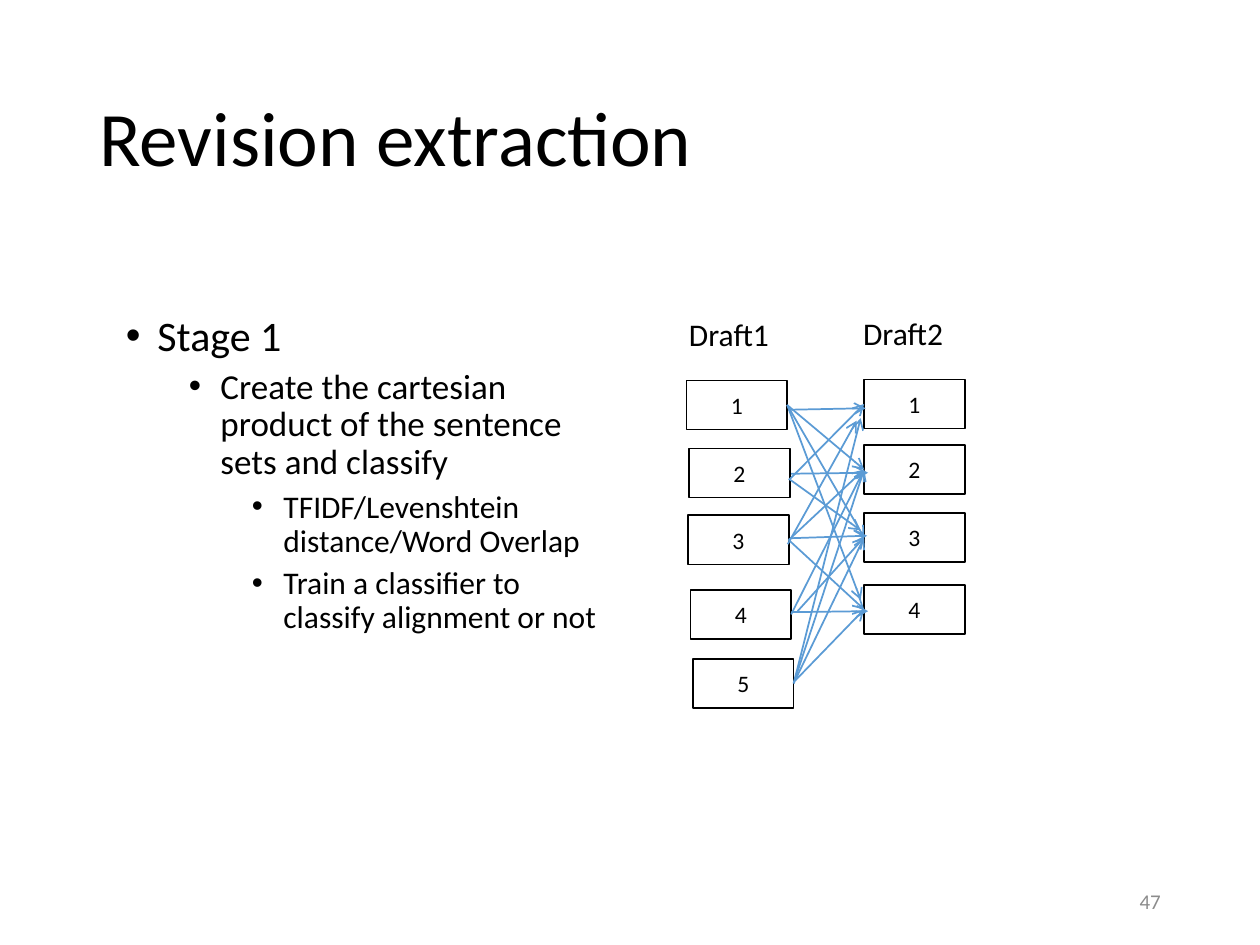
"""Build the slide on revision extraction: a bullet list and a diagram aligning two drafts."""
from lxml import etree
from pptx import Presentation
from pptx import util as u
from pptx.dml.color import RGBColor
from pptx.enum import shapes, text
from pptx.oxml.ns import qn

BLACK = RGBColor(0x00, 0x00, 0x00)
WHITE = RGBColor(0xFF, 0xFF, 0xFF)
GRAY = RGBColor(0x8C, 0x8C, 0x8C)
BLUE = RGBColor(0x5B, 0x9B, 0xD5)
FONT = "Calibri"
RIGHT_SIDE, LEFT_SIDE = 3, 1

TITLE = "Revision extraction"
PAGE_NUMBER = "47"
BULLETS = [
    (0, "Stage 1"),
    (1, "Create the cartesian product of the sentence sets and classify"),
    (2, "TFIDF/Levenshtein distance/Word Overlap"),
    (2, "Train a classifier to classify alignment or not"),
]
LEVEL_STYLES = [(24, 10), (20, 5), (18, 5)]
DRAFT_LABELS = [("Draft1", 13.64, 6.22), ("Draft2", 17.15, 6.2)]
BOX_WIDTH, BOX_HEIGHT = 2.03, 0.99
DRAFT1_BOXES = [(13.84, 7.67), (13.89, 9.04), (13.87, 10.39), (13.92, 11.89), (13.97, 13.28)]
DRAFT2_BOXES = [(17.42, top) for top in (7.65, 8.97, 10.34, 11.79)]
JOINED = None
ARROWS = [
    (1, 1, (15.9, 8.26), (17.45, 8.23)),
    (2, 2, (15.95, 9.55), (17.5, 9.53)),
    (3, 3, (15.93, 10.85), (17.48, 10.8)),
    (4, 4, (15.95, 12.34), (17.5, 12.32)),
    (1, 2, JOINED, JOINED),
    (2, 1, (15.93, 9.65), JOINED),
    (5, 4, (16.03, 13.72), JOINED),
    (3, 4, JOINED, JOINED),
    (2, 3, (15.9, 9.65), (17.35, 10.69)),
    (3, 2, JOINED, JOINED),
    (4, 3, (16.08, 12.32), JOINED),
    (3, 1, (15.88, 10.97), (17.27, 8.48)),
    (5, 2, JOINED, JOINED),
    (1, 3, JOINED, JOINED),
    (1, 4, JOINED, (17.35, 12.09)),
    (4, 2, JOINED, JOINED),
    (5, 3, JOINED, JOINED),
    (5, 1, JOINED, (17.35, 8.43)),
]


def cm(*lengths):
    return [u.Cm(length) for length in lengths]


def style(paragraph, size, color=BLACK, alignment=text.PP_ALIGN.LEFT):
    paragraph.alignment = alignment
    paragraph.font.name = FONT
    paragraph.font.size = u.Pt(size)
    paragraph.font.color.rgb = color


def add_text(slide, content, place, size, **look):
    frame = slide.shapes.add_textbox(*cm(*place)).text_frame
    frame.word_wrap = True
    frame.text = content
    style(frame.paragraphs[0], size, **look)
    return frame


def add_title(slide):
    title = slide.shapes.title
    title.left, title.top, title.width, title.height = cm(1.75, 1.02, 21.9, 3.68)
    title.text_frame.text = TITLE
    title.text_frame.vertical_anchor = text.MSO_ANCHOR.MIDDLE
    paragraph = title.text_frame.paragraphs[0]
    paragraph.line_spacing = 0.9
    style(paragraph, 44)


def add_bullets(slide):
    frame = slide.shapes.add_textbox(*cm(2.29, 6.22, 10.41, 8.38)).text_frame
    frame.word_wrap = True
    for index, (level, content) in enumerate(BULLETS):
        paragraph = frame.add_paragraph() if index else frame.paragraphs[0]
        size, space_before = LEVEL_STYLES[level]
        paragraph.text = content
        paragraph.level = level
        paragraph.line_spacing = 0.9
        paragraph.space_before = u.Pt(space_before)
        style(paragraph, size)
        properties = paragraph._p.get_or_add_pPr()
        properties.set("marL", str(u.Cm(0.635 + 1.27 * level)))
        properties.set("indent", str(-u.Cm(0.635)))
        bullet_font = etree.Element(qn("a:buFont"), typeface="Arial")
        bullet = etree.Element(qn("a:buChar"), char="•")
        properties.find(qn("a:defRPr")).addprevious(bullet_font)
        bullet_font.addnext(bullet)


def add_box(slide, number, left, top):
    box = slide.shapes.add_shape(
        shapes.MSO_SHAPE.RECTANGLE, *cm(left, top, BOX_WIDTH, BOX_HEIGHT))
    box.shadow.inherit = False
    box.fill.solid()
    box.fill.fore_color.rgb = WHITE
    box.line.color.rgb = BLACK
    box.line.width = u.Pt(1)
    box.text_frame.text = str(number)
    box.text_frame.vertical_anchor = text.MSO_ANCHOR.MIDDLE
    style(box.text_frame.paragraphs[0], 13.5, alignment=text.PP_ALIGN.CENTER)
    return box


def add_arrow(slide, source, target, start, end):
    arrow = slide.shapes.add_connector(
        shapes.MSO_CONNECTOR.STRAIGHT, *cm(*(start or (0, 0)), *(end or (0, 0))))
    if start is JOINED:
        arrow.begin_connect(source, RIGHT_SIDE)
    if end is JOINED:
        arrow.end_connect(target, LEFT_SIDE)
    arrow.line.color.rgb = BLUE
    arrow.line.width = u.Pt(1)
    etree.SubElement(arrow.line._get_or_add_ln(), qn("a:tailEnd"), type="arrow")
    etree.SubElement(arrow._element.spPr, qn("a:effectLst"))


def main():
    presentation = Presentation()
    presentation.slide_width, presentation.slide_height = cm(25.4, 19.05)
    slide = presentation.slides.add_slide(presentation.slide_layouts[5])
    add_title(slide)
    add_bullets(slide)
    number_frame = add_text(slide, PAGE_NUMBER, (17.93, 17.65, 5.72, 1.02), 12,
                            color=GRAY, alignment=text.PP_ALIGN.RIGHT)
    number_frame.vertical_anchor = text.MSO_ANCHOR.MIDDLE
    draft1, draft2 = (
        [add_box(slide, number, *place) for number, place in enumerate(places, 1)]
        for places in (DRAFT1_BOXES, DRAFT2_BOXES))
    for source, target, start, end in ARROWS:
        add_arrow(slide, draft1[source - 1], draft2[target - 1], start, end)
    for label, left, top in DRAFT_LABELS:
        add_text(slide, label, (left, top, 2.59, 1.02), 18)
    presentation.save("out.pptx")


if __name__ == "__main__":
    main()
